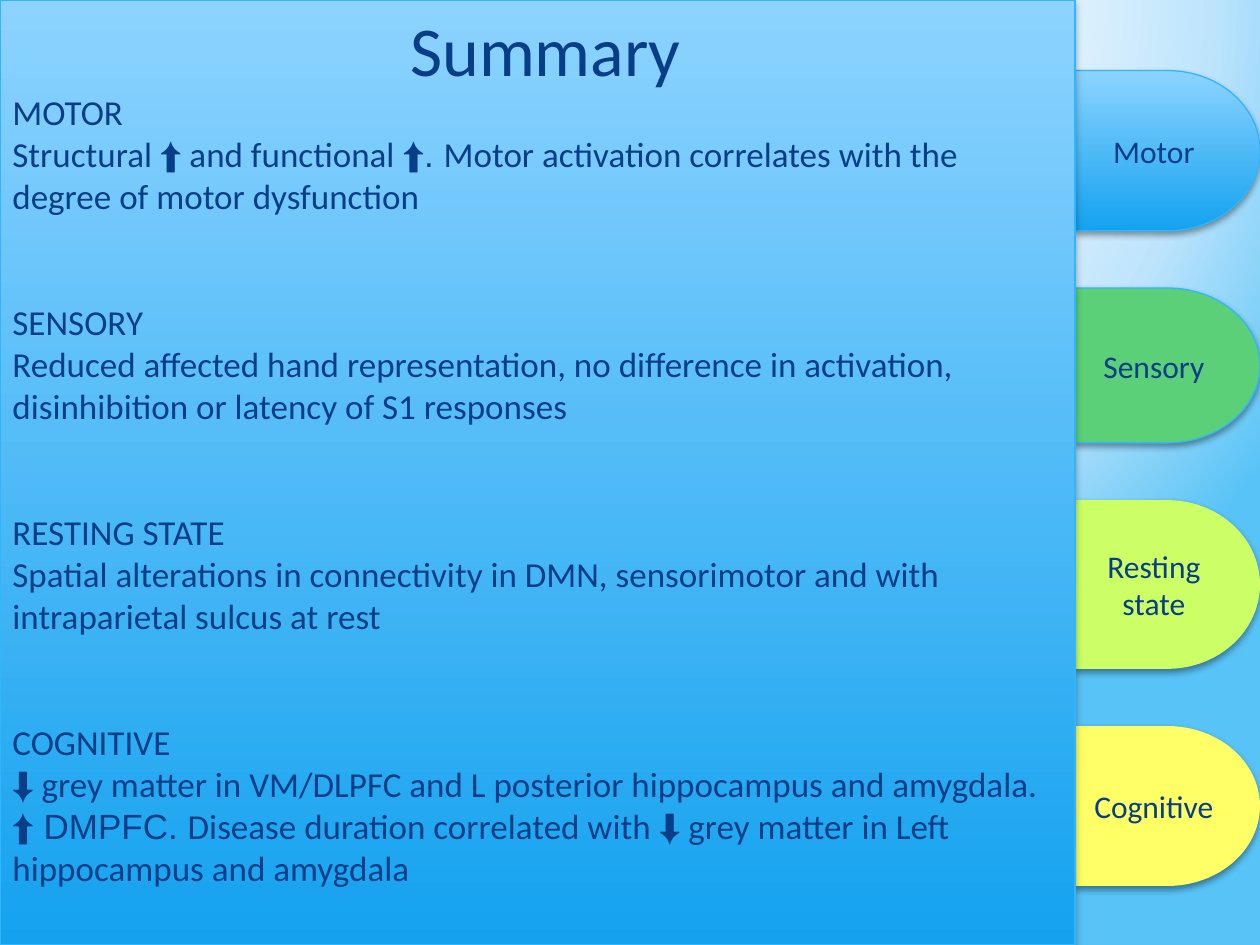
from dataclasses import dataclass

from lxml import etree
from pptx import Presentation
from pptx.dml.color import RGBColor
from pptx.enum.shapes import MSO_SHAPE
from pptx.enum.text import MSO_ANCHOR, PP_ALIGN
from pptx.oxml import parse_xml
from pptx.oxml.ns import qn
from pptx.shapes.autoshape import Shape
from pptx.slide import Slide
from pptx.text.text import _Paragraph
from pptx.util import Pt

RECTANGLE, DELAY = MSO_SHAPE.RECTANGLE, MSO_SHAPE.FLOWCHART_DELAY
LEFT, CENTER = PP_ALIGN.LEFT, PP_ALIGN.CENTER
TOP, MIDDLE = MSO_ANCHOR.TOP, MSO_ANCHOR.MIDDLE
DRAWING_NS = "http://schemas.openxmlformats.org/drawingml/2006/main"


@dataclass(frozen=True)
class Theme:
    ink: str = "073E87"
    border: str = "31B6FD"
    blue_gradient: tuple[str, str] = ("8CD3FF", "14A2EF")
    green: str = "5BD078"
    lime: str = "CCFF66"
    yellow: str = "FFFF66"
    backdrop: tuple[tuple[int, str], ...] = ((40, "FAFDFE"), (74, "BEE4FC"), (100, "58C3F6"))
    font: str = "Calibri"
    symbol_font: str = "Arial"
    title_size: int = 40
    body_size: int = 20
    tab_size: int = 18


THEME = Theme()


@dataclass(frozen=True)
class Tab:
    label: str
    height: float
    fill: str | tuple[str, str]
    outlined: bool = False
    wrap: bool = True


@dataclass(frozen=True)
class Span:
    text: str
    symbol: bool = False


@dataclass(frozen=True)
class Section:
    heading: str
    finding: tuple[Span, ...]


# Layout, in points
SLIDE_WIDTH, SLIDE_HEIGHT = 720, 540
PANEL_WIDTH = 614.25
FIRST_TAB_TOP, TAB_GAP = 40.3, 32.7
SECTION_GAP = 48
TITLE_INDENT = 9

TABS = (
    Tab("Motor", 91.6, THEME.blue_gradient, outlined=True, wrap=False),
    Tab("Sensory", 88.5, THEME.green, outlined=True),
    Tab("Resting state", 96.4, THEME.lime),
    Tab("Cognitive", 91.4, THEME.yellow),
)

SECTIONS = (
    Section("MOTOR", (
        Span("Structural "), Span("⬆", True), Span(" and functional "), Span("⬆. ", True),
        Span("Motor activation correlates with the degree of motor dysfunction"),
    )),
    Section("SENSORY", (
        Span("Reduced affected hand representation, no difference in activation, "
             "disinhibition or latency of S1 responses"),
    )),
    Section("RESTING STATE", (
        Span("Spatial alterations in connectivity in DMN, sensorimotor and with "
             "intraparietal sulcus at rest"),
    )),
    Section("COGNITIVE", (
        Span("⬇", True),
        Span(" grey matter in VM/DLPFC and L posterior hippocampus and amygdala. "),
        Span("⬆ DMPFC. ", True), Span("Disease duration correlated with "),
        Span("⬇", True), Span(" grey matter in Left hippocampus and amygdala"),
    )),
)


def paint_backdrop(slide: Slide) -> None:
    """Fill the background with a radial gradient centred above the slide."""
    slide.background.fill.solid()
    stops = "".join(
        f'<a:gs pos="{position * 1000}"><a:srgbClr val="{color}"/></a:gs>'
        for position, color in THEME.backdrop
    )
    gradient = parse_xml(
        f'<a:gradFill xmlns:a="{DRAWING_NS}" rotWithShape="1"><a:gsLst>{stops}</a:gsLst>'
        '<a:path path="circle"><a:fillToRect l="20000" t="-40000" r="20000" b="140000"/>'
        "</a:path></a:gradFill>"
    )
    solid = next(slide.background._cSld.iter(qn("a:solidFill")))
    solid.getparent().replace(solid, gradient)


def add_soft_shadow(shape: Shape) -> None:
    shape.shadow.inherit = False
    effects = shape._element.spPr.find(qn("a:effectLst"))
    shadow = etree.SubElement(
        effects, qn("a:outerShdw"), blurRad=str(Pt(4)), dist=str(Pt(2)),
        dir="5400000", rotWithShape="0",
    )
    black = etree.SubElement(shadow, qn("a:srgbClr"), val="000000")
    etree.SubElement(black, qn("a:alpha"), val="38000")


def add_block(slide: Slide, kind: MSO_SHAPE, left: float, top: float, width: float,
              height: float, fill: str | tuple[str, str], outlined: bool) -> Shape:
    block = slide.shapes.add_shape(kind, Pt(left), Pt(top), Pt(width), Pt(height))
    if isinstance(fill, str):
        block.fill.solid()
        block.fill.fore_color.rgb = RGBColor.from_string(fill)
    else:
        block.fill.gradient()
        block.fill.gradient_angle = 270
        for stop, position, color in zip(block.fill.gradient_stops, (0, 1), fill):
            stop.position = position
            stop.color.rgb = RGBColor.from_string(color)
    if outlined:
        block.line.color.rgb = RGBColor.from_string(THEME.border)
        block.line.width = Pt(0.75)
    else:
        block.line.fill.background()
    add_soft_shadow(block)
    return block


def write(paragraph: _Paragraph, spans: tuple[Span, ...], size: int, align: PP_ALIGN) -> None:
    paragraph.alignment = align
    for span in spans:
        run = paragraph.add_run()
        run.text = span.text
        run.font.name = THEME.symbol_font if span.symbol else THEME.font
        run.font.size = Pt(size)
        run.font.color.rgb = RGBColor.from_string(THEME.ink)


def draw_tab(slide: Slide, tab: Tab, top: float) -> None:
    block = add_block(slide, DELAY, PANEL_WIDTH, top, SLIDE_WIDTH - PANEL_WIDTH,
                      tab.height, tab.fill, tab.outlined)
    block.text_frame.word_wrap = tab.wrap
    block.text_frame.vertical_anchor = MIDDLE
    write(block.text_frame.paragraphs[0], (Span(tab.label),), THEME.tab_size, CENTER)


def draw_panel(slide: Slide) -> None:
    panel = add_block(slide, RECTANGLE, 0, 0, PANEL_WIDTH, SLIDE_HEIGHT,
                      THEME.blue_gradient, outlined=True)
    frame = panel.text_frame
    frame.word_wrap = True
    frame.vertical_anchor = TOP
    title = frame.paragraphs[0]
    write(title, (Span("Summary"),), THEME.title_size, CENTER)
    title._p.get_or_add_pPr().set("marL", str(Pt(TITLE_INDENT)))
    for index, section in enumerate(SECTIONS):
        heading = frame.add_paragraph()
        heading.space_before = Pt(SECTION_GAP if index else 0)
        write(heading, (Span(section.heading),), THEME.body_size, LEFT)
        write(frame.add_paragraph(), section.finding, THEME.body_size, LEFT)


def main() -> None:
    deck = Presentation()
    deck.slide_width, deck.slide_height = Pt(SLIDE_WIDTH), Pt(SLIDE_HEIGHT)
    slide = deck.slides.add_slide(deck.slide_layouts[6])
    paint_backdrop(slide)

    # Tabs down the right edge, evenly spaced
    top = FIRST_TAB_TOP
    for tab in TABS:
        draw_tab(slide, tab, top)
        top += tab.height + TAB_GAP

    # Summary panel over the tabs' straight edges
    draw_panel(slide)
    deck.save("out.pptx")


if __name__ == "__main__":
    main()
